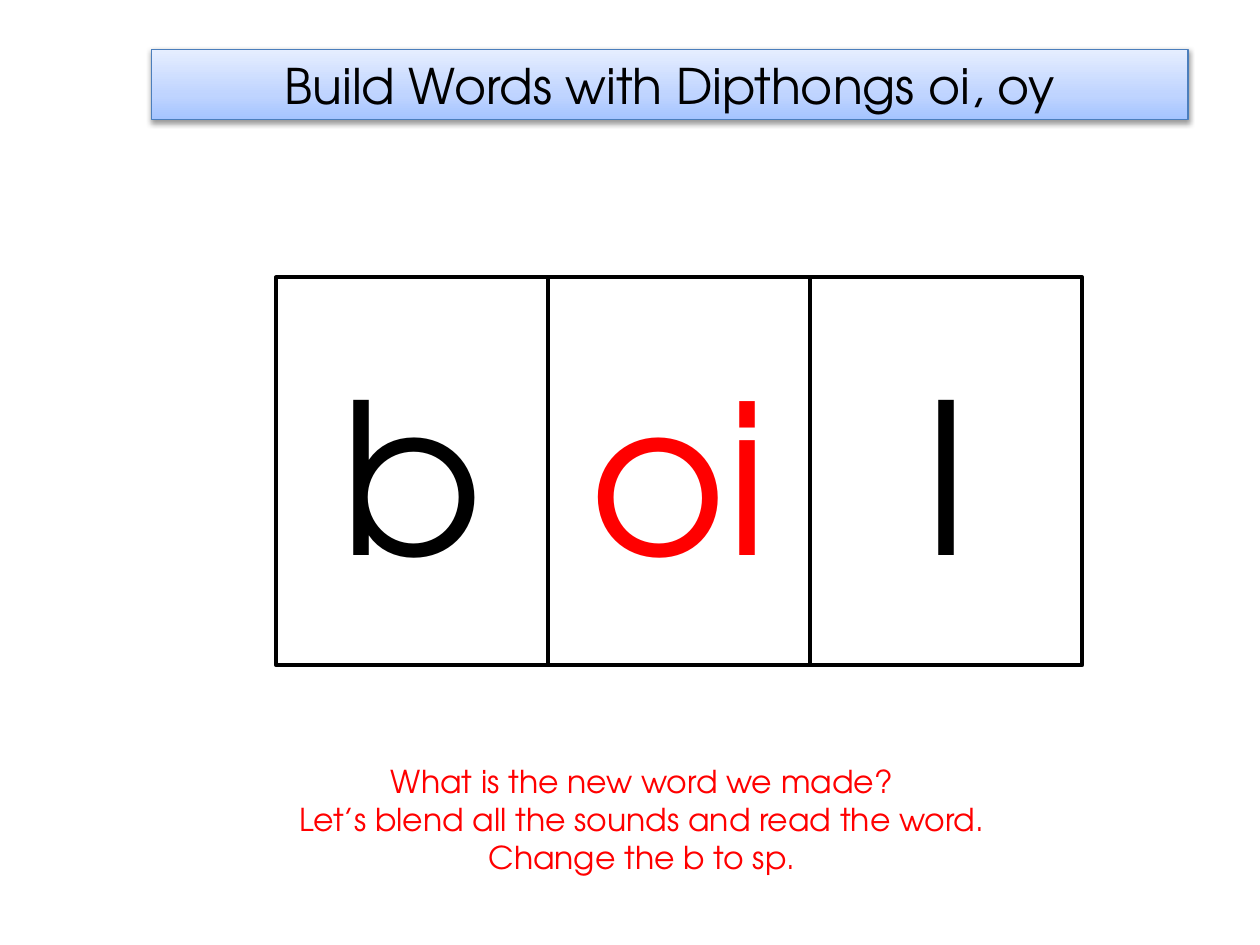
import copy

import pptx
import pptx.dml.color
import pptx.enum.shapes
import pptx.enum.text
import pptx.oxml
import pptx.oxml.ns
import pptx.util

COLS, ROWS = 100, 75
HEX = {
    "ink": "000000",
    "red": "FF0000",
    "paper": "FFFFFF",
    "edge": "4B7EBC",
    "deep": "A4C4FF",
    "mid": "BFD4FF",
    "pale": "E6EEFF",
}
SHADE = (
    '<a:effectLst xmlns:a="http://schemas.openxmlformats.org/drawingml/2006/main">'
    '<a:outerShdw blurRad="39370" dist="20320" dir="5400000" rotWithShape="0">'
    '<a:srgbClr val="{}"><a:alpha val="38000"/></a:srgbClr>'
    "</a:outerShdw></a:effectLst>"
)


def tint(name):
    return pptx.dml.color.RGBColor.from_string(HEX[name])


class Deck:
    """Holds the style and the current slide; boxes are in grid columns and rows."""

    font = "TeX Gyre Adventor"

    def __init__(self):
        self.file = pptx.Presentation()
        self.file.slide_width = pptx.util.Inches(10)
        self.file.slide_height = pptx.util.Inches(7.5)
        self.slide = self.file.slides.add_slide(self.file.slide_layouts[5])

    def span(self, left, top, width, height):
        """Turn a grid box into slide lengths."""
        col = self.file.slide_width / COLS
        row = self.file.slide_height / ROWS
        return [round(n) for n in (left * col, top * row, width * col, height * row)]

    def label(self, shape, text, size, color, anchor="MIDDLE"):
        frame = shape.text_frame
        frame.text = text
        frame.word_wrap = True
        frame.vertical_anchor = pptx.enum.text.MSO_ANCHOR[anchor]
        for line in frame.paragraphs:
            line.alignment = pptx.enum.text.PP_ALIGN.CENTER
            line.font.name = self.font
            line.font.size = pptx.util.Pt(size)
            line.font.color.rgb = tint(color)

    def edge(self, shape, color, width):
        shape.line.color.rgb = tint(color)
        shape.line.width = pptx.util.Pt(width)

    def title(self, text, box):
        shape = self.slide.shapes.title
        shape.left, shape.top, shape.width, shape.height = self.span(*box)
        self.label(shape, text, 28, "ink")
        shape.text_frame.auto_size = pptx.enum.text.MSO_AUTO_SIZE.NONE
        self.blend(shape, [(0, "deep"), (0.35, "mid"), (1, "pale")])
        self.edge(shape, "edge", 0.75)
        shade = pptx.oxml.parse_xml(SHADE.format(HEX["ink"]))
        shape.element.spPr.append(shade)

    def blend(self, shape, marks):
        """Fill with a gradient that runs upwards through the marks."""
        shape.fill.gradient()
        shape.fill.gradient_angle = 90
        stops = next(shape.element.spPr.iter(pptx.oxml.ns.qn("a:gsLst")))
        while len(stops) < len(marks):
            stops.append(copy.deepcopy(stops[-1]))
        for stop, (place, color) in zip(shape.fill.gradient_stops, marks):
            stop.position = place
            stop.color.rgb = tint(color)

    def card(self, text, color, box):
        kind = pptx.enum.shapes.MSO_SHAPE.RECTANGLE
        shape = self.slide.shapes.add_shape(kind, *self.span(*box))
        shape.shadow.inherit = False
        shape.fill.solid()
        shape.fill.fore_color.rgb = tint("paper")
        self.edge(shape, "ink", 2)
        self.label(shape, text, 120, color)

    def note(self, lines, box):
        shape = self.slide.shapes.add_textbox(*self.span(*box))
        self.label(shape, "\n".join(lines), 18, "red", "TOP")


def main():
    deck = Deck()
    deck.title("Build Words with Dipthongs oi, oy", (12, 3.9, 82.3, 5.6))

    left = 21.9
    for text, color, width in [("b", "ink", 21.6), ("oi", "red", 20.8), ("l", "ink", 21.6)]:
        deck.card(text, color, (left, 22, width, 30.8))
        left += width

    deck.note(
        [
            "What is the new word we made?",
            "Let’s blend all the sounds and read the word.",
            "Change the b to sp.",
        ],
        (16.1, 60, 69.7, 10.1),
    )
    deck.file.save("out.pptx")


if __name__ == "__main__":
    main()
